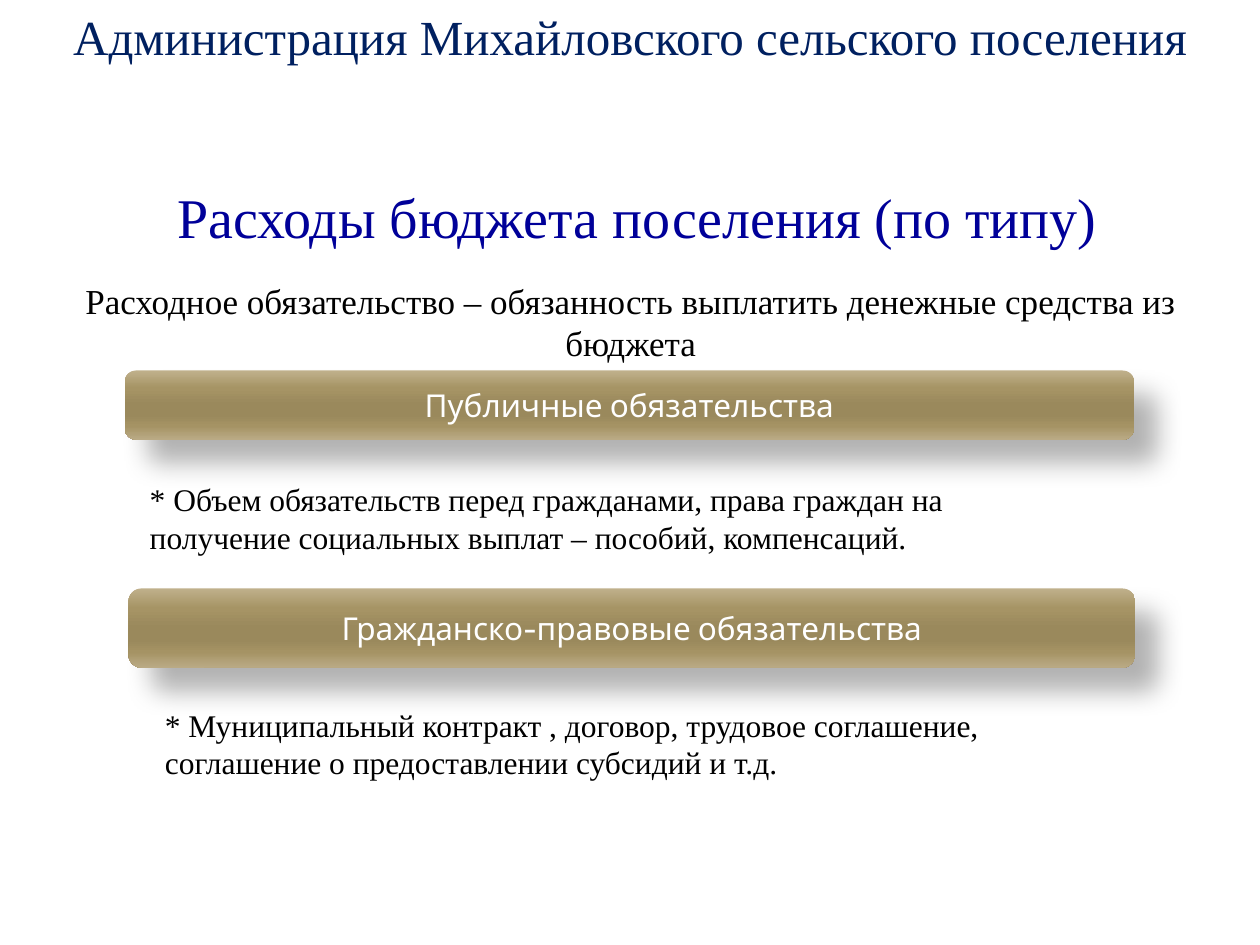
from lxml import etree
from pptx import Presentation
from pptx.dml.color import RGBColor
from pptx.enum.shapes import MSO_SHAPE
from pptx.enum.text import MSO_ANCHOR, MSO_AUTO_SIZE, PP_ALIGN
from pptx.util import Inches, Pt

ROUNDED = MSO_SHAPE.ROUNDED_RECTANGLE
TOP, MIDDLE = MSO_ANCHOR.TOP, MSO_ANCHOR.MIDDLE
LEFT, CENTER = PP_ALIGN.LEFT, PP_ALIGN.CENTER
GROW = MSO_AUTO_SIZE.SHAPE_TO_FIT_TEXT
DRAWING = "http://schemas.openxmlformats.org/drawingml/2006/main"

SERIF, SANS = "Times New Roman", "Cabin"
WIDTH, HEIGHT = 10, 7.5

# Boxes are left, top, width, height in inches
TITLE = ("Расходы бюджета поселения (по типу)", (0.69, 1.4, 8.74, 0.64), 32, "000099")
HEADINGS = [
    ("Администрация Михайловского сельского поселения", (0, 0, WIDTH, 0.57), 28, "002060"),
    ("Расходное обязательство – обязанность выплатить денежные средства из бюджета",
     (0.45, 2.17, 9.11, 0.77), 20, "000000"),
]
OBLIGATIONS = [
    ("Публичные обязательства", (0.99, 2.94, 8.01, 0.55),
     "* Объем обязательств перед гражданами, права граждан на получение "
     "социальных выплат – пособий, компенсаций.", (1.09, 3.76, 7.36, 0.71)),
    ("Гражданско-правовые обязательства", (1.02, 4.67, 7.99, 0.63),
     "* Муниципальный контракт , договор, трудовое соглашение, "
     "соглашение о предоставлении субсидий и т.д.", (1.21, 5.55, 7.49, 0.71)),
]
BAR_GRADIENT = [(0, "C0B18C"), (25, "A69465"), (50, "9A895C"),
                (65, "9A895C"), (80, "A59364"), (100, "BAAA85")]


def color(value):
    return RGBColor.from_string(value)


def inches(box):
    return [Inches(length) for length in box]


def write(shape, text, size, text_color, font=SERIF, align=CENTER, anchor=TOP):
    frame = shape.text_frame
    frame.text = text
    frame.word_wrap = True
    frame.vertical_anchor = anchor
    paragraph = frame.paragraphs[0]
    paragraph.alignment = align
    run_font = paragraph.runs[0].font
    run_font.name, run_font.size = font, Pt(size)
    run_font.color.rgb = color(text_color)


def add_text(slide, text, box, size, text_color, align=CENTER):
    shape = slide.shapes.add_textbox(*inches(box))
    write(shape, text, size, text_color, align=align)
    shape.text_frame.auto_size = GROW


def style_bar(shape):
    """Give the bar a vertical gradient, no outline and a soft diagonal shadow."""
    shape.line.fill.background()
    stops = "".join(f'<a:gs pos="{share * 1000}"><a:srgbClr val="{value}"/></a:gs>'
                    for share, value in BAR_GRADIENT)
    gradient = etree.fromstring(
        f'<a:gradFill xmlns:a="{DRAWING}" rotWithShape="1"><a:gsLst>{stops}</a:gsLst>'
        '<a:lin ang="5400000" scaled="0"/></a:gradFill>')
    shadow = etree.fromstring(
        f'<a:effectLst xmlns:a="{DRAWING}"><a:outerShdw blurRad="{Pt(15)}" dist="{Pt(18)}" '
        'dir="2700000" algn="tl" rotWithShape="0"><a:srgbClr val="000000">'
        '<a:alpha val="30000"/></a:srgbClr></a:outerShdw></a:effectLst>')
    outline = shape.line._get_or_add_ln()
    outline.addprevious(gradient)
    outline.addnext(shadow)


def add_bar(slide, text, box):
    shape = slide.shapes.add_shape(ROUNDED, *inches(box))
    style_bar(shape)
    write(shape, text, 18, "FFFFFF", font=SANS, anchor=MIDDLE)


def main():
    presentation = Presentation()
    presentation.slide_width, presentation.slide_height = Inches(WIDTH), Inches(HEIGHT)
    slide = presentation.slides.add_slide(presentation.slide_layouts[5])

    text, box, size, title_color = TITLE
    title = slide.shapes.title
    title.left, title.top, title.width, title.height = inches(box)
    write(title, text, size, title_color)
    title.text_frame.auto_size = GROW

    for heading in HEADINGS:
        add_text(slide, *heading)
    for name, bar_box, note, note_box in OBLIGATIONS:
        add_bar(slide, name, bar_box)
        add_text(slide, note, note_box, 18, "000000", align=LEFT)

    presentation.save("out.pptx")


if __name__ == "__main__":
    main()
